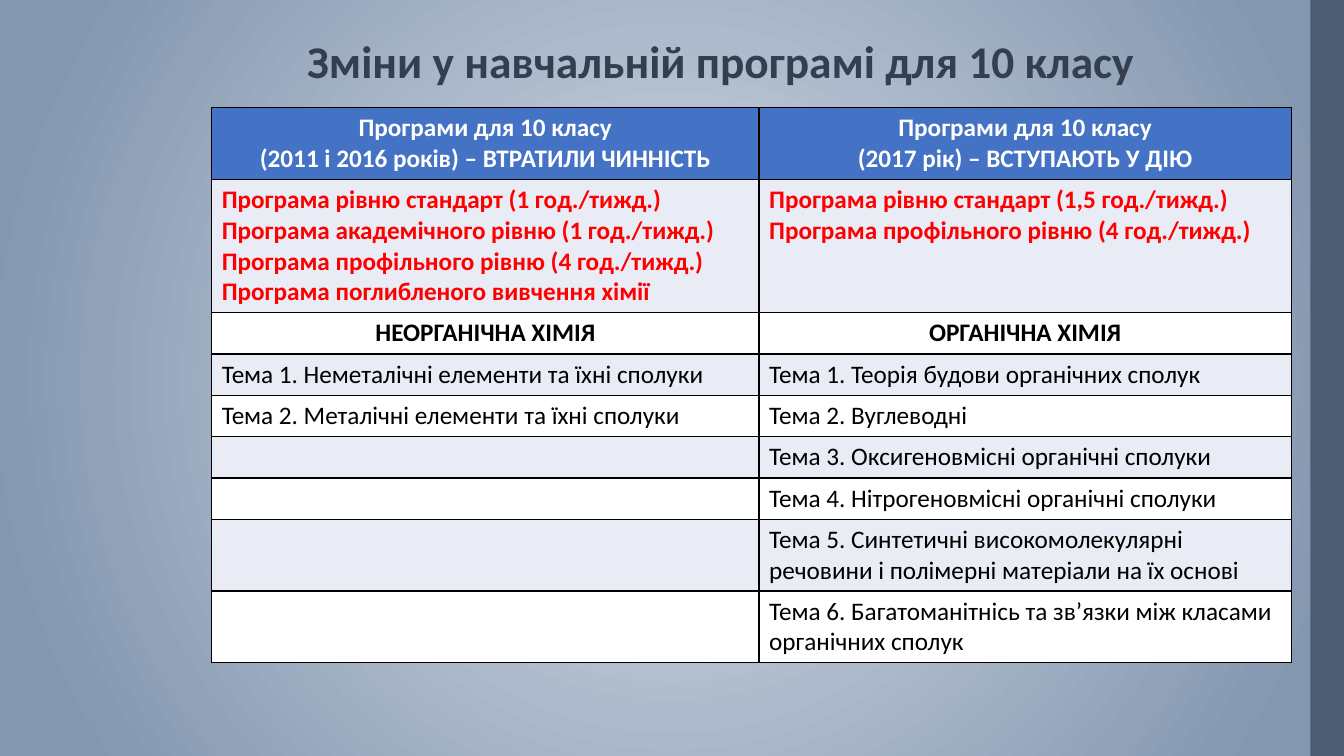
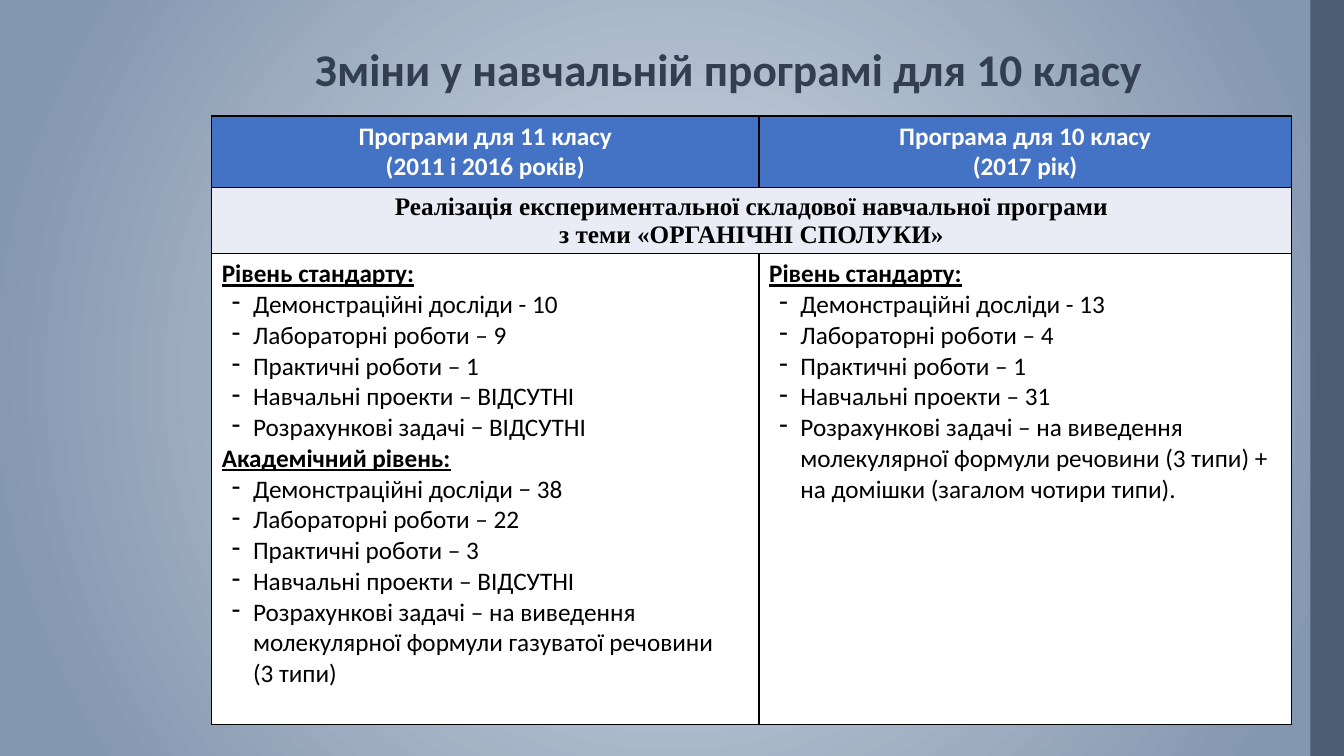
from pptx import Presentation
from pptx.dml.color import RGBColor as RGB
from pptx.enum.shapes import MSO_SHAPE as SHAPE
from pptx.enum.text import MSO_ANCHOR as ANCHOR, MSO_AUTO_SIZE as AUTO, PP_ALIGN as ALIGN
from pptx.oxml import parse_xml
from pptx.oxml.ns import nsdecls
from pptx.util import Inches, Pt

# Theme: colours, type sizes and text styles
THEME = {
    "glow": "D6DCE5", "edge": "8497B0", "band": "44546A", "title": "333F50",
    "head": "4472C4", "tint": "E9EBF5", "white": "FFFFFF", "black": "000000",
    "red": "FF0000", "font": "Calibri", "serif": "Times New Roman",
    "big": Pt(32.4), "text": Pt(18),
}
BASE = {"name": THEME["font"], "size": THEME["text"], "bold": False, "color": THEME["black"]}
STYLES = {
    "title": BASE | {"size": THEME["big"], "bold": True, "color": THEME["title"]},
    "head": BASE | {"bold": True, "color": THEME["white"]},
    "red": BASE | {"bold": True, "color": THEME["red"]},
    "bold": BASE | {"bold": True},
    "serif": BASE | {"bold": True, "name": THEME["serif"]},
    "level": BASE | {"bold": True, "underline": True},
    "plain": BASE,
    "item": BASE,
}
MIDDLE = {"title", "head", "bold", "serif"}

# Grid: 100 columns by 100 rows
WIDE, HIGH = Inches(13.33), Inches(7.5)
COL, ROW = WIDE / 100, HIGH / 100
LEFT, WIDTHS = 15.75, (40.73, 39.6)
ONE, TWO, FOUR = 5.47, 9.47, 17.6  # row heights by lines of text


def style(par, kind):
    par.alignment = ALIGN.CENTER if kind in MIDDLE else ALIGN.LEFT
    if kind == "item":
        props = par._p.get_or_add_pPr()
        props.set("marL", str(Inches(0.31)))
        props.set("indent", str(-Inches(0.21)))
        props.append(parse_xml(f'<a:buChar {nsdecls("a")} char="-"/>'))
    for run in par.runs:
        for key, val in STYLES[kind].items():
            if key == "color":
                run.font.color.rgb = RGB.from_string(val)
            else:
                setattr(run.font, key, val)


def fill_cell(cell, blocks, tone):
    props = cell._tc.get_or_add_tcPr()
    for side in "LRTB":
        props.append(parse_xml(
            f'<a:ln{side} {nsdecls("a")} w="{Pt(1)}"><a:solidFill>'
            f'<a:srgbClr val="{THEME["black"]}"/></a:solidFill></a:ln{side}>'))
    cell.fill.solid()
    cell.fill.fore_color.rgb = RGB.from_string(tone)
    lines = [(kind, line) for kind, text in blocks for line in text.split("\n")]
    for i, (kind, line) in enumerate(lines):
        frame = cell.text_frame
        par = frame.add_paragraph() if i else frame.paragraphs[0]
        par.text = line
        style(par, kind)


# Content: each cell is a list of (style, lines)
TITLE = "Зміни у навчальній програмі для 10 класу"
TOPICS = [
    ([("head", "Програми для 10 класу\n(2011 і 2016 років) – ВТРАТИЛИ ЧИННІСТЬ")],
     [("head", "Програми для 10 класу\n(2017 рік) – ВСТУПАЮТЬ У ДІЮ")]),
    ([("red", "Програма рівню стандарт (1 год./тижд.)\n"
              "Програма академічного рівню (1 год./тижд.)\n"
              "Програма профільного рівню (4 год./тижд.)\n"
              "Програма поглибленого вивчення хімії")],
     [("red", "Програма рівню стандарт (1,5 год./тижд.)\n"
              "Програма профільного рівню (4 год./тижд.)")]),
    ([("bold", "НЕОРГАНІЧНА ХІМІЯ")], [("bold", "ОРГАНІЧНА ХІМІЯ")]),
    ([("plain", "Тема 1. Неметалічні елементи та їхні сполуки")],
     [("plain", "Тема 1. Теорія будови органічних сполук")]),
    ([("plain", "Тема 2. Металічні елементи та їхні сполуки")],
     [("plain", "Тема 2. Вуглеводні")]),
    ([], [("plain", "Тема 3. Оксигеновмісні органічні сполуки")]),
    ([], [("plain", "Тема 4. Нітрогеновмісні органічні сполуки")]),
    ([], [("plain", "Тема 5. Синтетичні високомолекулярні речовини "
                    "і полімерні матеріали на їх основі")]),
    ([], [("plain", "Тема 6. Багатоманітнісь та зв’язки між класами органічних сполук")]),
]
WORKS = [
    ([("head", "Програми для 11 класу\n(2011 і 2016 років)")],
     [("head", "Програма для 10 класу\n(2017 рік)")]),
    ([("serif", "Реалізація експериментальної складової навчальної програми\n"
                "з теми «ОРГАНІЧНІ СПОЛУКИ»")], None),
    ([("level", "Рівень стандарту:"),
      ("item", "Демонстраційні досліди - 10\n"
               "Лабораторні роботи – 9\n"
               "Практичні роботи – 1\n"
               "Навчальні проекти – ВІДСУТНІ\n"
               "Розрахункові задачі − ВІДСУТНІ"),
      ("level", "Академічний рівень:"),
      ("item", "Демонстраційні досліди − 38\n"
               "Лабораторні роботи – 22\n"
               "Практичні роботи – 3\n"
               "Навчальні проекти – ВІДСУТНІ\n"
               "Розрахункові задачі – на виведення молекулярної формули "
               "газуватої речовини\v(3 типи)")],
     [("level", "Рівень стандарту:"),
      ("item", "Демонстраційні досліди - 13\n"
               "Лабораторні роботи – 4\n"
               "Практичні роботи – 1\n"
               "Навчальні проекти – 31\n"
               "Розрахункові задачі – на виведення молекулярної формули "
               "речовини (3 типи) + на домішки (загалом чотири типи).")]),
]
# Title left, title top, row heights, table rows
SLIDES = [
    (19.88, 2.8, [TWO, FOUR] + [ONE] * 5 + [TWO] * 2, TOPICS),
    (20.48, 3.87, [TWO, 8.75, 62.25], WORKS),
]

deck = Presentation()
deck.slide_width, deck.slide_height = WIDE, HIGH
master = deck.slide_master

# Shared background: round gradient
master.background.fill.solid()
plain = master.element.xpath("p:cSld/p:bg/p:bgPr/a:solidFill")[0]
plain.getparent().replace(plain, parse_xml(
    f'<a:gradFill {nsdecls("a")} rotWithShape="1"><a:gsLst>'
    f'<a:gs pos="0"><a:srgbClr val="{THEME["glow"]}"/></a:gs>'
    f'<a:gs pos="90000"><a:srgbClr val="{THEME["edge"]}"/></a:gs></a:gsLst>'
    '<a:path path="circle"><a:fillToRect l="50000" t="50000" r="50000" b="50000"/></a:path>'
    '</a:gradFill>'))

for num, (left, top, heights, rows) in enumerate(SLIDES):
    slide = deck.slides.add_slide(deck.slide_layouts[5])

    # Side band, drawn once and moved to the master
    if num == 0:
        band = slide.shapes.add_shape(
            SHAPE.RECTANGLE, int(97.5 * COL), 0, int(2.5 * COL), HIGH)
        band.shadow.inherit = False
        band.line.fill.background()
        band.fill.solid()
        band.fill.fore_color.rgb = RGB.from_string(THEME["band"])
        band.element.xpath(".//a:srgbClr")[0].append(
            parse_xml(f'<a:alpha {nsdecls("a")} val="87000"/>'))
        master.element.xpath("p:cSld/p:spTree")[0].insert(2, band.element)

    # Title
    title = slide.shapes.title
    place = {"left": left * COL, "top": top * ROW, "width": 67.5 * COL, "height": 9.6 * ROW}
    for key, val in place.items():
        setattr(title, key, int(val))
    frame = title.text_frame
    frame.text = TITLE
    frame.auto_size, frame.vertical_anchor = AUTO.NONE, ANCHOR.BOTTOM
    frame.paragraphs[0].line_spacing = 0.9
    style(frame.paragraphs[0], "title")

    # Table
    grid = slide.shapes.add_table(
        len(rows), len(WIDTHS), int(LEFT * COL), int((top + 11.47) * ROW),
        int(sum(WIDTHS) * COL), int(sum(heights) * ROW)).table
    for col, width in zip(grid.columns, WIDTHS):
        col.width = int(width * COL)
    for r, (height, cells) in enumerate(zip(heights, rows)):
        grid.rows[r].height = int(height * ROW)
        tone = THEME["head" if r == 0 else "tint" if r % 2 else "white"]
        if cells[1] is None:
            grid.cell(r, 0).merge(grid.cell(r, 1))
        for c, blocks in enumerate(cells):
            fill_cell(grid.cell(r, c), blocks or [], tone)

deck.save("out.pptx")
